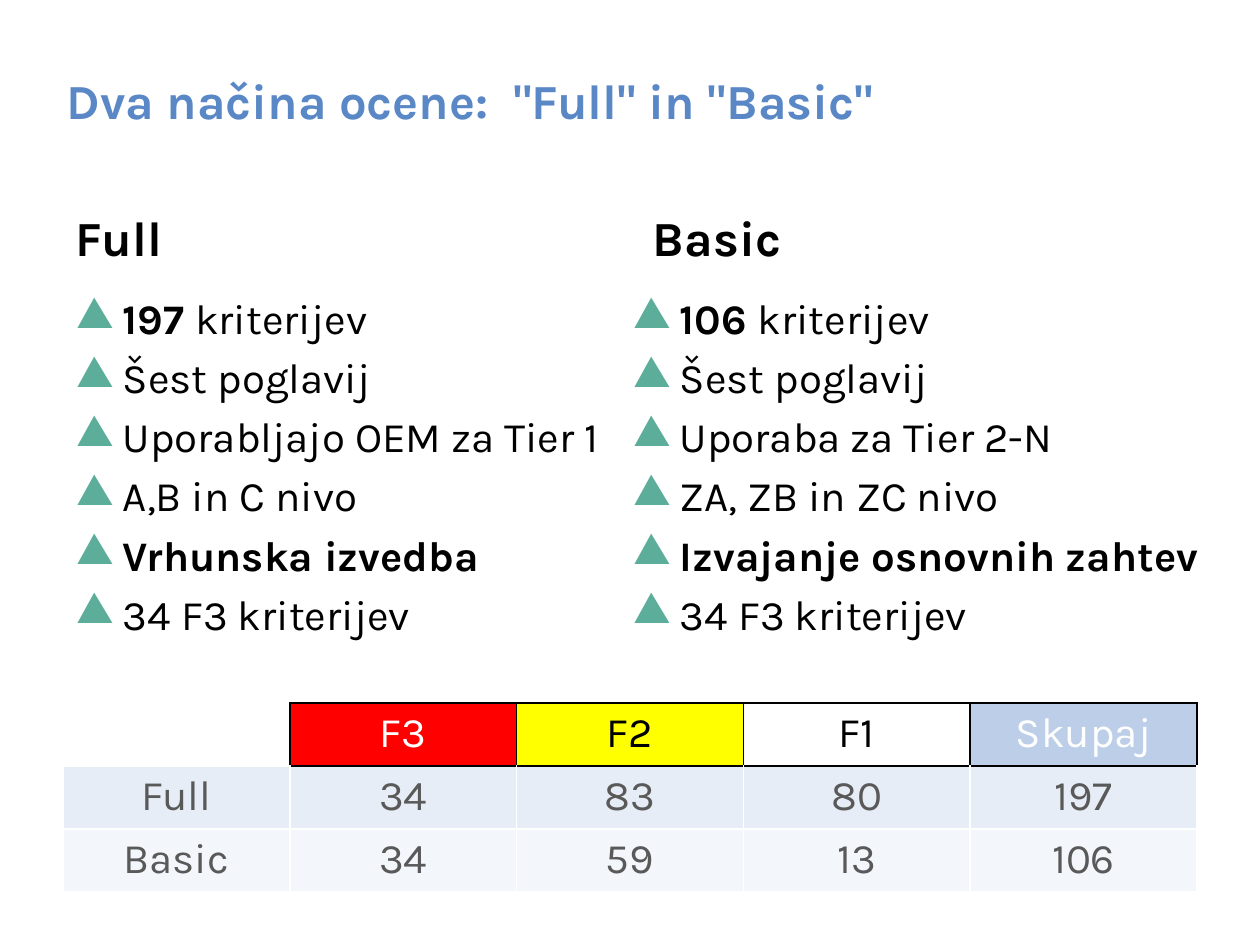
from dataclasses import dataclass

import lxml.etree
import pptx
import pptx.dml.color
import pptx.enum.text
import pptx.oxml.ns
import pptx.util

RGBColor = pptx.dml.color.RGBColor
Align = pptx.enum.text.PP_ALIGN
Anchor = pptx.enum.text.MSO_ANCHOR
qn = pptx.oxml.ns.qn

EMU_PER_PX = 914400 / 126
FONT = "Karla"
INSET = 13
INDENT = 47

BLACK = RGBColor(0x00, 0x00, 0x00)
WHITE = RGBColor(0xFF, 0xFF, 0xFF)
BLUE = RGBColor(0x5A, 0x87, 0xC6)
GREEN = RGBColor(0x5D, 0xAD, 0x9B)
RED = RGBColor(0xFF, 0x00, 0x00)
YELLOW = RGBColor(0xFF, 0xFF, 0x00)
PALE_BLUE = RGBColor(0xBC, 0xCE, 0xE8)
BAND_DARK = RGBColor(0xE7, 0xED, 0xF6)
BAND_LIGHT = RGBColor(0xF3, 0xF6, 0xFB)
GREY = RGBColor(0x59, 0x59, 0x59)


@dataclass
class Item:
    bold: str = ""
    plain: str = ""


@dataclass
class Column:
    heading: str
    heading_left: int
    list_left: int
    list_width: int
    items: list[Item]


@dataclass
class Header:
    label: str
    fill: RGBColor
    color: RGBColor


COLUMNS = [
    Column("Full", 63, 63, 577, [
        Item("197 ", "kriterijev"),
        Item(plain="Šest poglavij"),
        Item(plain="Uporabljajo OEM za Tier 1"),
        Item(plain="A,B in C nivo"),
        Item(bold="Vrhunska izvedba"),
        Item(plain="34 F3 kriterijev"),
    ]),
    Column("Basic", 640, 620, 640, [
        Item("106 ", "kriterijev"),
        Item(plain="Šest poglavij"),
        Item(plain="Uporaba za Tier 2-N"),
        Item(plain="ZA, ZB in ZC nivo"),
        Item(bold="Izvajanje osnovnih zahtev"),
        Item(plain="34 F3 kriterijev"),
    ]),
]
HEADERS = [
    Header("F3", RED, WHITE),
    Header("F2", YELLOW, BLACK),
    Header("F1", WHITE, BLACK),
    Header("Skupaj", PALE_BLUE, WHITE),
]
ROWS = [
    (["Full", "34", "83", "80", "197"], BAND_DARK),
    (["Basic", "34", "59", "13", "106"], BAND_LIGHT),
]


def px(n: int) -> int:
    return pptx.util.Emu(round(n * EMU_PER_PX))


def add_text(p, text: str, *, size: int = 24, bold: bool = False,
             color: RGBColor = BLACK, align=Align.LEFT, spacing: float = 0.9) -> None:
    """Add a formatted run to a paragraph."""
    p.alignment = align
    p.line_spacing = spacing
    r = p.add_run()
    r.text = text
    r.font.name = FONT
    r.font.size = pptx.util.Pt(size)
    r.font.bold = bold
    r.font.color.rgb = color


def add_box(s, left: int, top: int, width: int, height: int, anchor):
    tf = s.shapes.add_textbox(px(left), px(top), px(width), px(height)).text_frame
    tf.word_wrap = True
    tf.vertical_anchor = anchor
    tf.margin_left = tf.margin_right = tf.margin_top = tf.margin_bottom = px(INSET)
    return tf


def add_bullet(p) -> None:
    ppr = p._p.get_or_add_pPr()
    ppr.set("marL", str(px(INDENT)))
    ppr.set("indent", str(-px(INDENT)))
    color = lxml.etree.SubElement(ppr, qn("a:buClr"))
    lxml.etree.SubElement(color, qn("a:srgbClr"), val=str(GREEN))
    lxml.etree.SubElement(ppr, qn("a:buChar"), char="▲")


def add_column(s, col: Column) -> None:
    tf = add_box(s, col.heading_left, 197, 557, 88, Anchor.MIDDLE)
    add_text(tf.paragraphs[0], col.heading, size=28, bold=True)

    tf = add_box(s, col.list_left, 285, col.list_width, 446, Anchor.TOP)
    for i, item in enumerate(col.items):
        p = tf.add_paragraph() if i else tf.paragraphs[0]
        add_bullet(p)
        if i:
            p.space_before = pptx.util.Pt(7.9)
        for text, bold in ((item.bold, True), (item.plain, False)):
            if text:
                add_text(p, text, bold=bold)


def format_cell(cell, text: str, fill, color: RGBColor, borders: dict) -> None:
    """Set borders (side to colour), fill and centred text of a cell."""
    tcpr = cell._tc.get_or_add_tcPr()
    for side in "LRTB":
        ln = lxml.etree.SubElement(tcpr, qn(f"a:ln{side}"), w=str(pptx.util.Pt(1)))
        solid = lxml.etree.SubElement(ln, qn("a:solidFill"))
        lxml.etree.SubElement(solid, qn("a:srgbClr"), val=str(borders[side]))
    if fill is None:
        cell.fill.background()
    else:
        cell.fill.solid()
        cell.fill.fore_color.rgb = fill
    if text:
        add_text(cell.text_frame.paragraphs[0], text, color=color,
                 align=Align.CENTER, spacing=1.0)


def add_score_table(s) -> None:
    n_rows, n_cols = len(ROWS) + 1, len(HEADERS) + 1
    table = s.shapes.add_table(n_rows, n_cols, px(63), px(703),
                               px(1134), px(52 * n_rows)).table
    table.first_row = table.horz_banding = False
    white = dict.fromkeys("LRTB", WHITE)
    black = dict.fromkeys("LRTB", BLACK)

    # Header row, with an empty corner
    format_cell(table.cell(0, 0), "", None, BLACK, white | {"R": BLACK})
    for c, h in enumerate(HEADERS, 1):
        format_cell(table.cell(0, c), h.label, h.fill, h.color, black)

    # Score rows
    for r, (values, fill) in enumerate(ROWS, 1):
        for c, value in enumerate(values):
            under_header = r == 1 and c > 0
            borders = white | {"T": BLACK} if under_header else white
            format_cell(table.cell(r, c), value, fill, GREY, borders)


def main() -> None:
    prs = pptx.Presentation()
    prs.slide_width, prs.slide_height = px(1260), px(945)
    s = prs.slides.add_slide(prs.slide_layouts[5])

    # Title
    title = s.shapes.title
    title.left, title.top, title.width, title.height = px(54), px(26), px(983), px(110)
    tf = title.text_frame
    tf.auto_size = pptx.enum.text.MSO_AUTO_SIZE.NONE
    tf.vertical_anchor = Anchor.BOTTOM
    add_text(tf.paragraphs[0], 'Dva načina ocene:  "Full" in "Basic"',
             size=28, bold=True, color=BLUE)

    # Two compared lists
    for col in COLUMNS:
        add_column(s, col)

    # Criteria counts
    add_score_table(s)
    prs.save("out.pptx")


if __name__ == "__main__":
    main()
